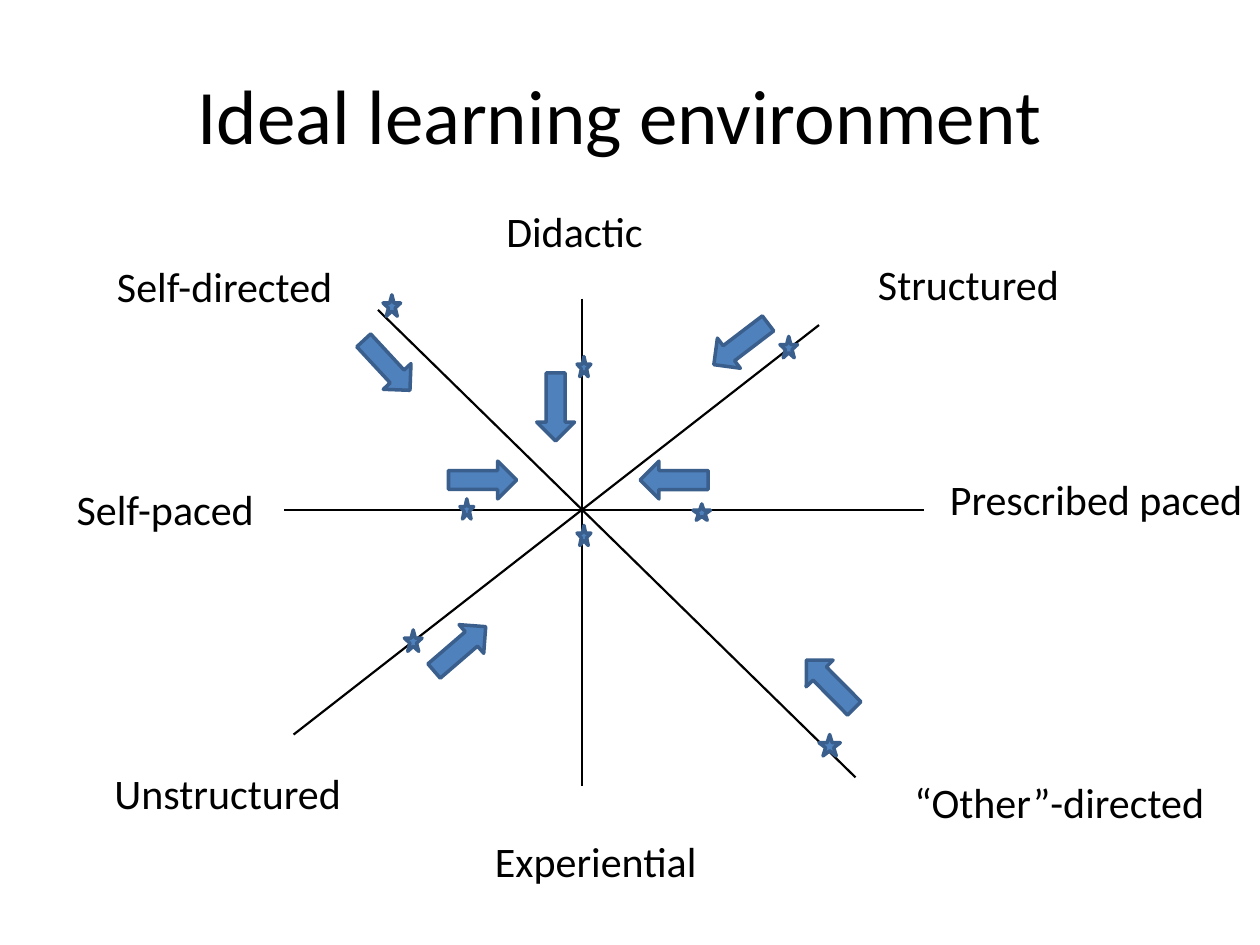
from collections import namedtuple
from dataclasses import dataclass

from lxml import etree
from pptx import Presentation
from pptx import util as u
from pptx.dml.color import RGBColor
from pptx.enum import shapes, text
from pptx.oxml import ns

PX = u.Inches(1) // 100
Box = namedtuple("Box", "left top width height")
Pole = namedtuple("Pole", "name label tip star arrow")


@dataclass(frozen=True)
class Theme:
    """Colours, font and type sizes of the slide."""
    ink: RGBColor = RGBColor(0, 0, 0)
    fill: RGBColor = RGBColor(0x4F, 0x81, 0xBD)
    edge: RGBColor = RGBColor(0x3A, 0x5F, 0x8C)
    font: str = "Calibri"
    title_size: int = 44
    label_size: int = 24
    axis_width: float = 1.25
    edge_width: int = 2


THEME = Theme()
ARROW_SIZE = (54, 30)
HUB = (411, 247)

AXES = [
    (Pole("Structured", Box(225, -205, 200, 50), (188, -147),
          Box(157, -138, 14, 17), (99, -147, 142.7)),
     Pole("Unstructured", Box(-381, 199, 212, 50), (-229, 178),
          Box(-141, 95, 14, 17), (-124, 95, 319.3))),
    (Pole("“Other”-directed", Box(254, 206, 267, 50), (217, 212),
          Box(188, 178, 17, 17), (170, 123, 225.3)),
     Pole("Self-directed", Box(-379, -203, 212, 50), (-162, -159),
          Box(-158, -171, 14, 17), (-182, -130, 47.2))),
    (Pole("Didactic", Box(-70, -247, 200, 50), (0, -168),
          Box(-4, -122, 11, 16), (-48, -97, 90)),
     Pole("Experiential", Box(-79, 253, 200, 50), (0, 219),
          Box(-4, 12, 11, 16), None)),
    (Pole("Prescribed paced", Box(282, -34, 278, 50), (271, 0),
          Box(88, -5, 14, 13), (46, -39, 180)),
     Pole("Self-paced", Box(-411, -26, 200, 50), (-237, 0),
          Box(-97, -9, 11, 16), (-106, -39, 0))),
]


def apply(target, values):
    """Set each named attribute of the target."""
    for name, value in values.items():
        setattr(target, name, value)


def emu(lengths):
    """Turn px lengths into EMU."""
    return [length * PX for length in lengths]


def shift(box, origin):
    """Move a box by an origin."""
    return Box(box.left + origin[0], box.top + origin[1], box.width, box.height)


def add_text(page, box, words, size, align, anchor):
    """Place one line of text in a box."""
    frame = page.shapes.add_textbox(*emu(box)).text_frame
    apply(frame, {"word_wrap": True, "vertical_anchor": anchor})
    para = frame.paragraphs[0]
    para.alignment = align
    span = para.add_run()
    span.text = words
    apply(span.font, {"name": THEME.font, "size": u.Pt(size)})
    span.font.color.rgb = THEME.ink


def add_marker(page, kind, box, rotation=0):
    """Place a filled star or arrow."""
    marker = page.shapes.add_shape(kind, *emu(box))
    marker.rotation = rotation
    marker.shadow.inherit = False
    marker.fill.solid()
    marker.fill.fore_color.rgb = THEME.fill
    marker.line.color.rgb = THEME.edge
    marker.line.width = u.Pt(THEME.edge_width)


def add_axis(page, hub, start, end):
    """Draw a line between two tips measured from the hub."""
    ends = [hub[i] + tip[i] for tip in (start, end) for i in (0, 1)]
    axis = page.shapes.add_connector(shapes.MSO_CONNECTOR.STRAIGHT, *emu(ends))
    axis.line.color.rgb = THEME.ink
    axis.line.width = u.Pt(THEME.axis_width)
    etree.SubElement(axis._element.spPr, ns.qn("a:effectLst"))


def add_pole(page, hub, pole):
    """Place the label, star and arrow of one pole."""
    add_text(page, shift(pole.label, hub), pole.name, THEME.label_size,
             text.PP_ALIGN.LEFT, text.MSO_ANCHOR.TOP)
    add_marker(page, shapes.MSO_SHAPE.STAR_5_POINT, shift(pole.star, hub))
    if pole.arrow:
        left, top, rotation = pole.arrow
        add_marker(page, shapes.MSO_SHAPE.RIGHT_ARROW,
                   shift(Box(left, top, *ARROW_SIZE), hub), rotation)


def add_title(page, box):
    """Place the slide title."""
    add_text(page, box, "Ideal learning environment", THEME.title_size,
             text.PP_ALIGN.CENTER, text.MSO_ANCHOR.MIDDLE)


def add_wheel(page, box):
    """Draw the crossing axes and their poles."""
    hub = (box.left + HUB[0], box.top + HUB[1])
    for start, end in AXES:
        add_axis(page, hub, start.tip, end.tip)
    for axis in AXES:
        for pole in axis:
            add_pole(page, hub, pole)


def main():
    """Build and save the deck."""
    deck = Presentation()
    apply(deck, {"slide_width": 1000 * PX, "slide_height": 750 * PX})
    page = deck.slides.add_slide(deck.slide_layouts[6])
    add_title(page, Box(-8, 28, 1000, 125))
    add_wheel(page, Box(51, 158, 971, 550))
    deck.save("out.pptx")


if __name__ == "__main__":
    main()
